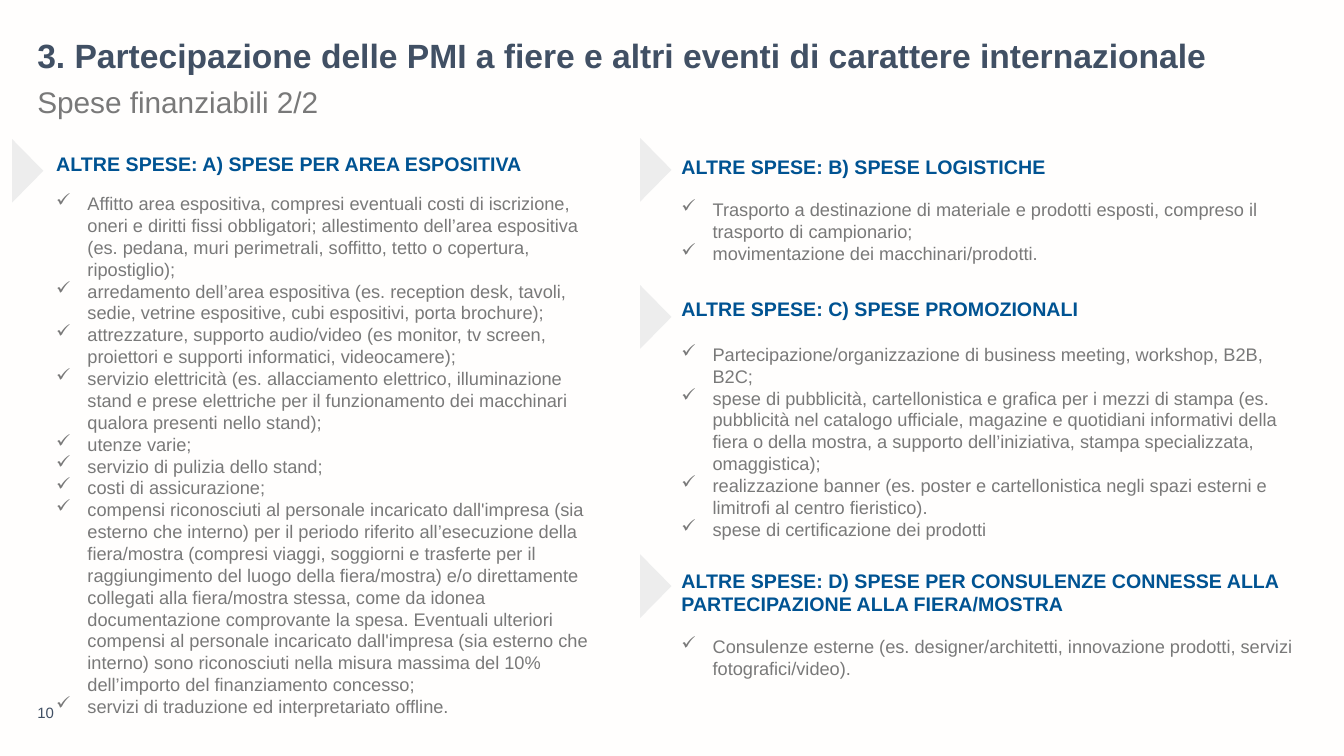
from lxml import etree
from pptx import Presentation
from pptx.dml.color import RGBColor
from pptx.enum.shapes import MSO_SHAPE
from pptx.enum.text import MSO_ANCHOR, MSO_AUTO_SIZE
from pptx.oxml.ns import qn
from pptx.util import Inches, Pt

TRIANGLE = MSO_SHAPE.ISOSCELES_TRIANGLE
BOTTOM = MSO_ANCHOR.BOTTOM
GROW = MSO_AUTO_SIZE.SHAPE_TO_FIT_TEXT
FIXED = MSO_AUTO_SIZE.NONE

FONT = "Arial"
COLORS = {"background": "FFFEFD", "title": "415064", "text": "797979",
          "heading": "005392", "marker": "EDEDED"}

# Content
TITLE = "3. Partecipazione delle PMI a fiere e altri eventi di carattere internazionale"
SUBTITLE = "Spese finanziabili 2/2"
PAGE = "10"

LEFT_COLUMN = (0.46, 5.67, -0.04)  # text left, text width, marker left
RIGHT_COLUMN = (6.66, 6.25, 6.19)

# column, text top, height, marker top, gap under heading (pt), heading, items
SECTIONS = [
    (LEFT_COLUMN, 1.46, 5.76, 1.54, 12, "ALTRE SPESE: A) SPESE PER AREA ESPOSITIVA", [
        "Affitto area espositiva, compresi eventuali costi di iscrizione, oneri e diritti fissi "
        "obbligatori; allestimento dell’area espositiva (es. pedana, muri perimetrali, soffitto, "
        "tetto o copertura, ripostiglio);",
        "arredamento dell’area espositiva (es. reception desk, tavoli, sedie, vetrine espositive, "
        "cubi espositivi, porta brochure);",
        "attrezzature, supporto audio/video (es monitor, tv screen, proiettori e supporti "
        "informatici, videocamere);",
        "servizio elettricità (es. allacciamento elettrico, illuminazione stand e prese elettriche "
        "per il funzionamento dei macchinari qualora presenti nello stand);",
        "utenze varie;",
        "servizio di pulizia dello stand;",
        "costi di assicurazione;",
        "compensi riconosciuti al personale incaricato dall'impresa (sia esterno che interno) per "
        "il periodo riferito all’esecuzione della fiera/mostra (compresi viaggi, soggiorni e "
        "trasferte per il raggiungimento del luogo della fiera/mostra) e/o direttamente collegati "
        "alla fiera/mostra stessa, come da idonea documentazione comprovante la spesa. Eventuali "
        "ulteriori compensi al personale incaricato dall'impresa (sia esterno che interno) sono "
        "riconosciuti nella misura massima del 10% dell’importo del finanziamento concesso;",
        "servizi di traduzione ed interpretariato offline.",
    ]),
    (RIGHT_COLUMN, 1.49, 1.19, 1.53, 14, "ALTRE SPESE: B) SPESE LOGISTICHE", [
        "Trasporto a destinazione di materiale e prodotti esposti, compreso il trasporto di "
        "campionario;",
        "movimentazione dei macchinari/prodotti.",
    ]),
    (RIGHT_COLUMN, 2.9, 2.54, 2.99, 16, "ALTRE SPESE: C) SPESE PROMOZIONALI", [
        "Partecipazione/organizzazione di business meeting, workshop, B2B, B2C;",
        "spese di pubblicità, cartellonistica e grafica per i mezzi di stampa (es. pubblicità nel "
        "catalogo ufficiale, magazine e quotidiani informativi della fiera o della mostra, a "
        "supporto dell’iniziativa, stampa specializzata, omaggistica);",
        "realizzazione banner (es. poster e cartellonistica negli spazi esterni e limitrofi al "
        "centro fieristico).",
        "spese di certificazione dei prodotti",
    ]),
    (RIGHT_COLUMN, 5.59, 1.21, 5.66, 14,
     "ALTRE SPESE: D) SPESE PER CONSULENZE CONNESSE ALLA PARTECIPAZIONE ALLA FIERA/MOSTRA", [
         "Consulenze esterne (es. designer/architetti, innovazione prodotti, servizi "
         "fotografici/video).",
     ]),
]


def add_box(s, left, top, width, height, margins=True, size_mode=FIXED):
    sp = s.shapes.add_textbox(Inches(left), Inches(top), Inches(width), Inches(height))
    tf = sp.text_frame
    tf.word_wrap = True
    tf.auto_size = size_mode
    if not margins:
        tf.margin_left = tf.margin_top = tf.margin_right = tf.margin_bottom = 0
    return tf


def add_text(tf, text, size, color, bold=False, bullet=False, after=0, spacing=1.0):
    p = tf.paragraphs[0]
    if p.runs:
        p = tf.add_paragraph()
    if bullet:
        pPr = p._p.get_or_add_pPr()
        pPr.set("marL", str(Inches(0.31)))
        pPr.set("indent", str(-Inches(0.31)))
        etree.SubElement(pPr, qn("a:buChar")).set("char", "✓")
    p.space_after = Pt(after)
    p.line_spacing = spacing
    r = p.add_run()
    r.text = text
    r.font.name = FONT
    r.font.size = Pt(size)
    r.font.bold = bold
    r.font.color.rgb = RGBColor.from_string(COLORS[color])


def add_marker(s, left, top):
    sp = s.shapes.add_shape(TRIANGLE, Inches(left), Inches(top), Inches(0.63), Inches(0.31))
    sp.rotation = 90
    sp.shadow.inherit = False
    sp.fill.solid()
    sp.fill.fore_color.rgb = RGBColor.from_string(COLORS["marker"])
    sp.line.fill.background()


def main():
    prs = Presentation()
    prs.slide_width, prs.slide_height = Inches(13.33), Inches(7.5)
    s = prs.slides.add_slide(prs.slide_layouts[6])
    s.background.fill.solid()
    s.background.fill.fore_color.rgb = RGBColor.from_string(COLORS["background"])

    # Title, subtitle and page number
    tf = add_box(s, 0.37, 0.39, 12.96, 0.42, margins=False)
    add_text(tf, TITLE, 24, "title", bold=True, spacing=0.9)
    tf = add_box(s, 0.37, 0.87, 9.4, 0.42, margins=False)
    add_text(tf, SUBTITLE, 21.3, "text", spacing=0.9)
    tf = add_box(s, 0.37, 6.89, 1.47, 0.27, margins=False)
    tf.vertical_anchor = BOTTOM
    add_text(tf, PAGE, 10.7, "title")

    # Expense sections, each with its marker
    for column, top, height, marker_top, gap, heading, items in SECTIONS:
        left, width, marker_left = column
        add_marker(s, marker_left, marker_top)
        tf = add_box(s, left, top, width, height, size_mode=GROW)
        add_text(tf, heading, 14, "heading", bold=True, after=gap)
        for item in items:
            add_text(tf, item, 13, "text", bullet=True)

    prs.save("out.pptx")


if __name__ == "__main__":
    main()
